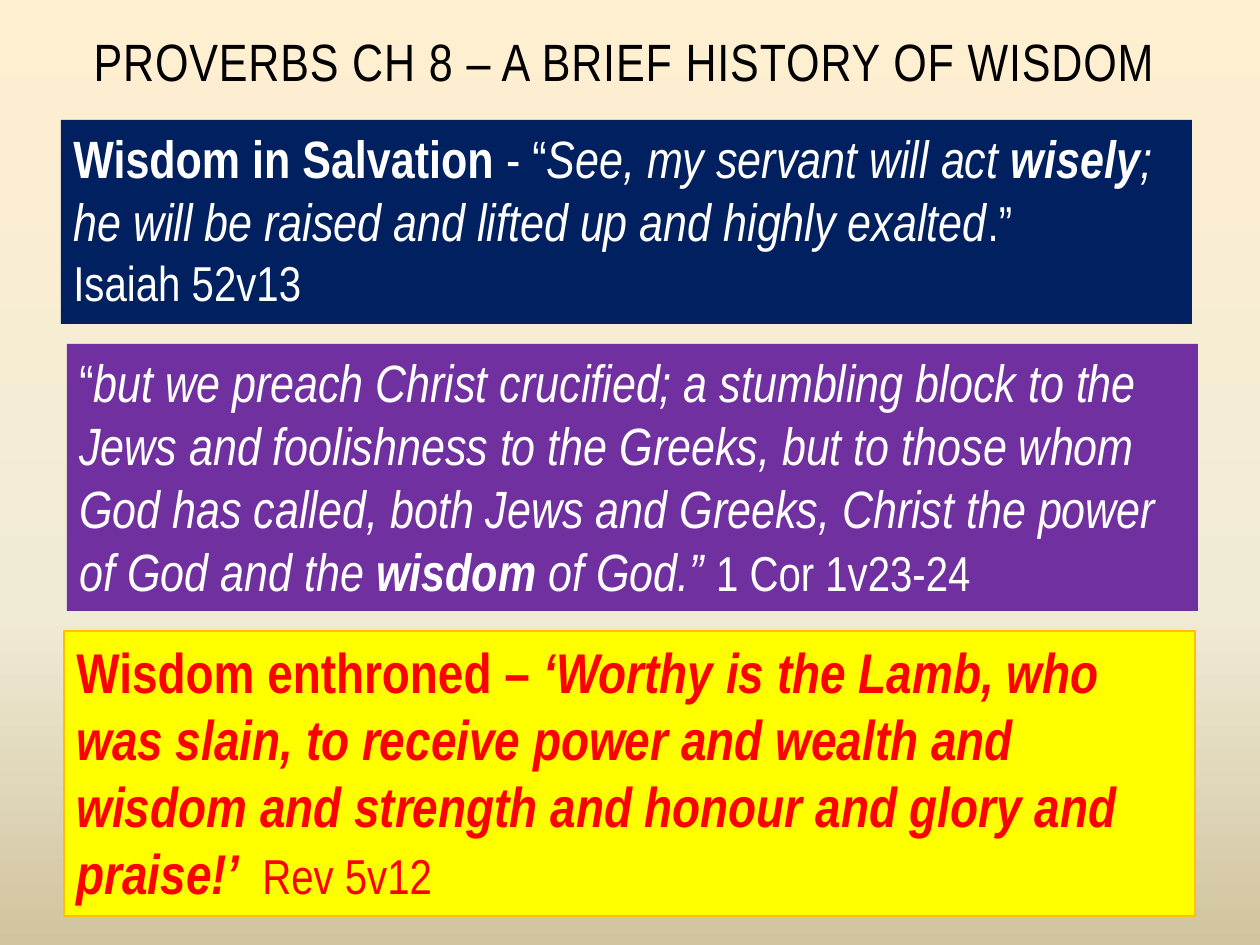
from copy import deepcopy

from pptx import Presentation
from pptx.dml.color import RGBColor
from pptx.enum.shapes import MSO_SHAPE
from pptx.enum.text import MSO_ANCHOR, MSO_AUTO_SIZE, PP_ALIGN
from pptx.util import Pt

EMU_PER_PX = 914400 / 126
FONT = "Arial Narrow"
COLORS = {
    "black": "000000", "white": "FFFFFF", "navy": "002060", "purple": "7030A0",
    "yellow": "FFFF00", "red": "FF0000", "amber": "FFC000",
}
BACKGROUND = [(0, "FFEFD1"), (0.65, "F0EBD5"), (1, "D1C39F")]

# Content: each run is (text, size, style), with b for bold and i for italic
TITLE = "PROVERBS CH 8 – A BRIEF HISTORY OF WISDOM"
TITLE_PLACE = (81, 11, 1092, 87)
BOX_WIDTH = 1131
BOXES = [
    {
        "left": 61, "top": 120, "height": 204,
        "fill": "navy", "line": None, "text": "white",
        "paragraphs": [
            [
                ("Wisdom in Salvation ", 30, "b"),
                ("- “", 30, ""),
                ("See, my servant will act ", 30, "i"),
                ("wisely", 30, "bi"),
                ("; he will be raised and lifted up and highly exalted", 30, "i"),
                (".”", 28, ""),
            ],
            [("Isaiah 52v13", 28, "")],
        ],
    },
    {
        "left": 67, "top": 344, "height": 267,
        "fill": "purple", "line": None, "text": "white",
        "paragraphs": [
            [
                ("“", 30, ""),
                ("but we preach Christ crucified; a stumbling block to the Jews "
                 "and foolishness to the Greeks, but to those whom God has called, "
                 "both Jews and Greeks, Christ the power of God and the ", 30, "i"),
                ("wisdom", 30, "bi"),
                (" of God.” ", 30, "i"),
                ("1 Cor 1v23-24", 28, ""),
            ],
        ],
    },
    {
        "left": 64, "top": 631, "height": 285,
        "fill": "yellow", "line": "amber", "text": "red",
        "paragraphs": [
            [
                ("Wisdom enthroned – ", 32, "b"),
                ("‘Worthy is the Lamb, who was slain, to receive power and wealth "
                 "and wisdom and strength and honour and glory and praise!’  ", 32, "bi"),
                ("Rev 5v12", 28, ""),
            ],
        ],
    },
]


def px(*lengths):
    return [round(length * EMU_PER_PX) for length in lengths]


def rgb(name):
    return RGBColor.from_string(COLORS[name])


def format_run(run, size, color, style=""):
    font = run.font
    font.name, font.size = FONT, Pt(size)
    font.bold, font.italic = "b" in style, "i" in style
    font.color.rgb = rgb(color)


def paint_background(slide):
    fill = slide.background.fill
    fill.gradient()
    fill.gradient_angle = 270
    stop_list = slide.element.xpath(".//a:gsLst")[0]
    stop_list.append(deepcopy(stop_list[-1]))
    for stop, (position, color) in zip(fill.gradient_stops, BACKGROUND):
        stop.position = position
        stop.color.rgb = RGBColor.from_string(color)


def set_title(slide):
    title = slide.shapes.title
    title.left, title.top, title.width, title.height = px(*TITLE_PLACE)
    frame = title.text_frame
    frame.text = TITLE
    frame.auto_size = MSO_AUTO_SIZE.NONE
    frame.vertical_anchor = MSO_ANCHOR.BOTTOM
    para = frame.paragraphs[0]
    para.alignment = PP_ALIGN.LEFT
    format_run(para.runs[0], 30, "black")
    para.runs[0].font._element.set("spc", "50")


def add_box(slide, content):
    place = px(content["left"], content["top"], BOX_WIDTH, content["height"])
    box = slide.shapes.add_shape(MSO_SHAPE.RECTANGLE, *place)
    box.shadow.inherit = False
    box.fill.solid()
    box.fill.fore_color.rgb = rgb(content["fill"])
    if content["line"]:
        box.line.color.rgb = rgb(content["line"])
        box.line.width = Pt(0.75)
    else:
        box.line.fill.background()

    frame = box.text_frame
    frame.word_wrap = True
    frame.auto_size = MSO_AUTO_SIZE.SHAPE_TO_FIT_TEXT
    frame.vertical_anchor = MSO_ANCHOR.TOP
    for index, spans in enumerate(content["paragraphs"]):
        para = frame.add_paragraph() if index else frame.paragraphs[0]
        para.alignment = PP_ALIGN.LEFT
        for text, size, style in spans:
            span = para.add_run()
            span.text = text
            format_run(span, size, content["text"], style)


def main():
    deck = Presentation()
    deck.slide_width, deck.slide_height = px(1260, 945)
    slide = deck.slides.add_slide(deck.slide_layouts[5])
    paint_background(slide)
    set_title(slide)
    for content in BOXES:
        add_box(slide, content)
    deck.save("out.pptx")


if __name__ == "__main__":
    main()
